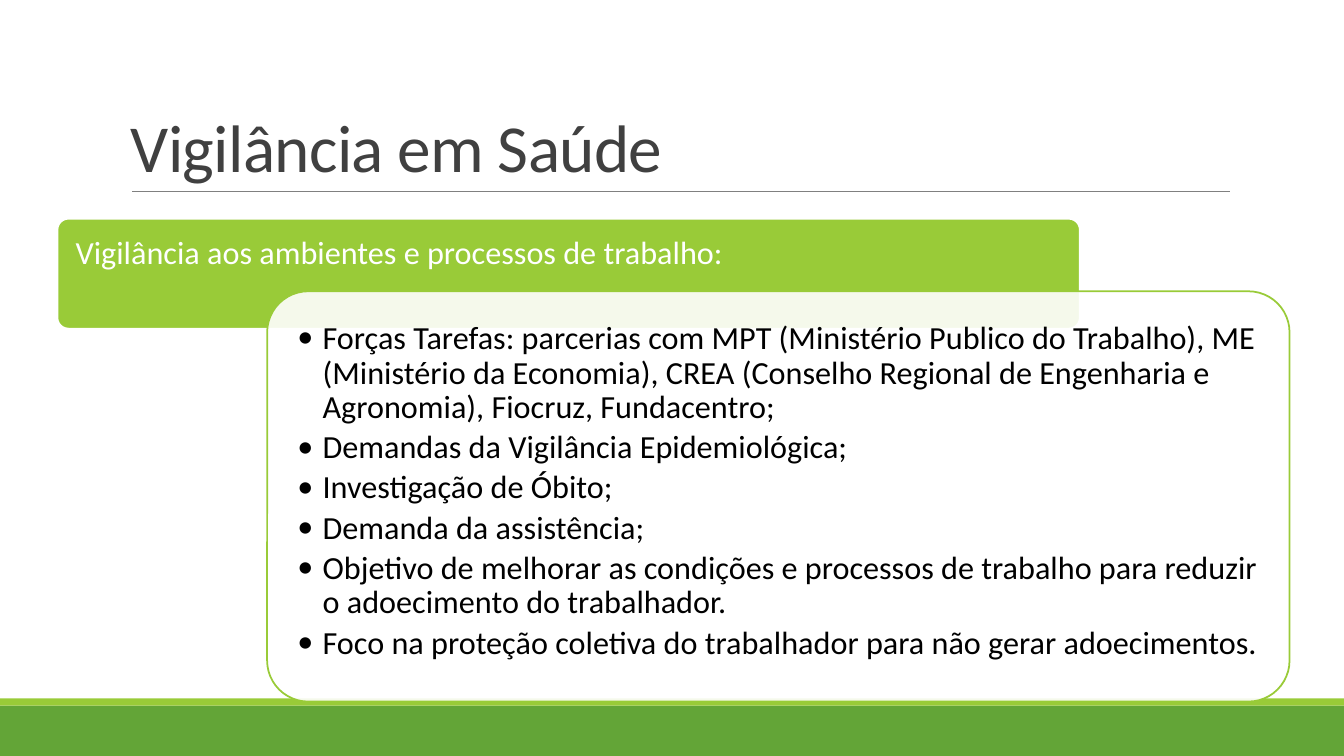
from dataclasses import dataclass

from lxml.etree import SubElement
from pptx import Presentation
from pptx.dml.color import RGBColor
from pptx.enum.shapes import MSO_CONNECTOR, MSO_SHAPE
from pptx.enum.text import MSO_ANCHOR
from pptx.oxml.ns import qn
from pptx.util import Inches, Pt


@dataclass(frozen=True)
class Theme:
    font: str = "Calibri"
    white: str = "FFFFFF"
    black: str = "000000"
    title: str = "404040"
    rule: str = "808080"
    green: str = "63A537"
    lime: str = "99CB38"
    title_size: float = 48
    body_size: float = 23


THEME = Theme()

HEADING = "Vigilância aos ambientes e processos de trabalho:"
ACTIONS = [
    "Forças Tarefas: parcerias com MPT (Ministério Publico do Trabalho), ME "
    "(Ministério da Economia), CREA (Conselho Regional de Engenharia e "
    "Agronomia), Fiocruz, Fundacentro;",
    "Demandas da Vigilância Epidemiológica;",
    "Investigação de Óbito;",
    "Demanda da assistência;",
    "Objetivo de melhorar as condições e processos de trabalho para reduzir "
    "o adoecimento do trabalhador.",
    "Foco na proteção coletiva do trabalhador para não gerar adoecimentos.",
]


def rgb(color):
    return RGBColor.from_string(color)


def add_panel(slide, box, fill, line=None, kind=MSO_SHAPE.RECTANGLE, opacity=None):
    shape = slide.shapes.add_shape(kind, *map(Inches, box))
    shape.shadow.inherit = False
    shape.fill.solid()
    shape.fill.fore_color.rgb = rgb(fill)
    if opacity is not None:
        color = shape.fill._xPr.find(f".//{qn('a:srgbClr')}")
        SubElement(color, qn("a:alpha"), val=str(opacity * 1000))
    if line:
        shape.line.color.rgb = rgb(line)
        shape.line.width = Pt(1.25)
    else:
        shape.line.fill.background()
    return shape


def add_rounded_panel(slide, box, fill, line, opacity=None):
    shape = add_panel(slide, box, fill, line, MSO_SHAPE.ROUNDED_RECTANGLE, opacity)
    shape.adjustments[0] = 0.1


def add_rule(slide, left, right, top):
    ends = map(Inches, (left, top, right, top))
    connector = slide.shapes.add_connector(MSO_CONNECTOR.STRAIGHT, *ends)
    connector.line.color.rgb = rgb(THEME.rule)
    connector.line.width = Pt(0.5)
    SubElement(connector._element.spPr, qn("a:effectLst"))


def add_bullet(paragraph):
    properties = paragraph._p.get_or_add_pPr()
    properties.set("marL", str(Inches(0.25)))
    properties.set("indent", str(-Inches(0.25)))
    SubElement(properties, qn("a:buFont"), typeface=THEME.font)
    SubElement(properties, qn("a:buChar"), char="•")


def add_text(slide, box, texts, *, size, color, insets, anchor=MSO_ANCHOR.TOP,
             line_spacing=0.9, space_after=0, bullets=False, tracking=None):
    frame = slide.shapes.add_textbox(*map(Inches, box)).text_frame
    frame.word_wrap = True
    frame.vertical_anchor = anchor
    (frame.margin_left, frame.margin_top,
     frame.margin_right, frame.margin_bottom) = map(Inches, insets)
    for index, text in enumerate(texts):
        paragraph = frame.paragraphs[0] if index == 0 else frame.add_paragraph()
        if bullets:
            add_bullet(paragraph)
        paragraph.line_spacing = line_spacing
        paragraph.space_after = Pt(space_after)
        run = paragraph.add_run()
        run.text = text
        run.font.name = THEME.font
        run.font.size = Pt(size)
        run.font.color.rgb = rgb(color)
        if tracking is not None:
            run._r.get_or_add_rPr().set("spc", str(round(tracking * 100)))


def main():
    presentation = Presentation()
    presentation.slide_width = Inches(13.33)
    presentation.slide_height = Inches(7.5)
    slide = presentation.slides.add_slide(presentation.slide_layouts[6])

    add_panel(slide, (0, 7, 13.33, 0.5), THEME.green)
    add_panel(slide, (0, 6.93, 13.33, 0.07), THEME.lime)
    add_rule(slide, 1.31, 12.2, 1.9)
    add_text(slide, (1.2, 0.31, 11, 1.59), ["Vigilância em Saúde"],
             size=THEME.title_size, color=THEME.title,
             insets=(0.1, 0.05, 0.1, 0.05), anchor=MSO_ANCHOR.BOTTOM,
             line_spacing=0.85, tracking=-0.5)

    add_rounded_panel(slide, (0.57, 2.17, 10.14, 1.09), THEME.lime, THEME.white)
    add_text(slide, (0.57, 2.17, 10.14, 0.72), [HEADING],
             size=THEME.body_size, color=THEME.white,
             insets=(0.18, 0.18, 0.18, 0.1))

    add_rounded_panel(slide, (2.65, 2.89, 10.14, 4.07), THEME.white, THEME.lime,
                      opacity=90)
    add_text(slide, (2.77, 3.01, 9.9, 3.84), ACTIONS,
             size=THEME.body_size, color=THEME.black, insets=(0.18,) * 4,
             space_after=3.8, bullets=True)

    presentation.save("out.pptx")


if __name__ == "__main__":
    main()
